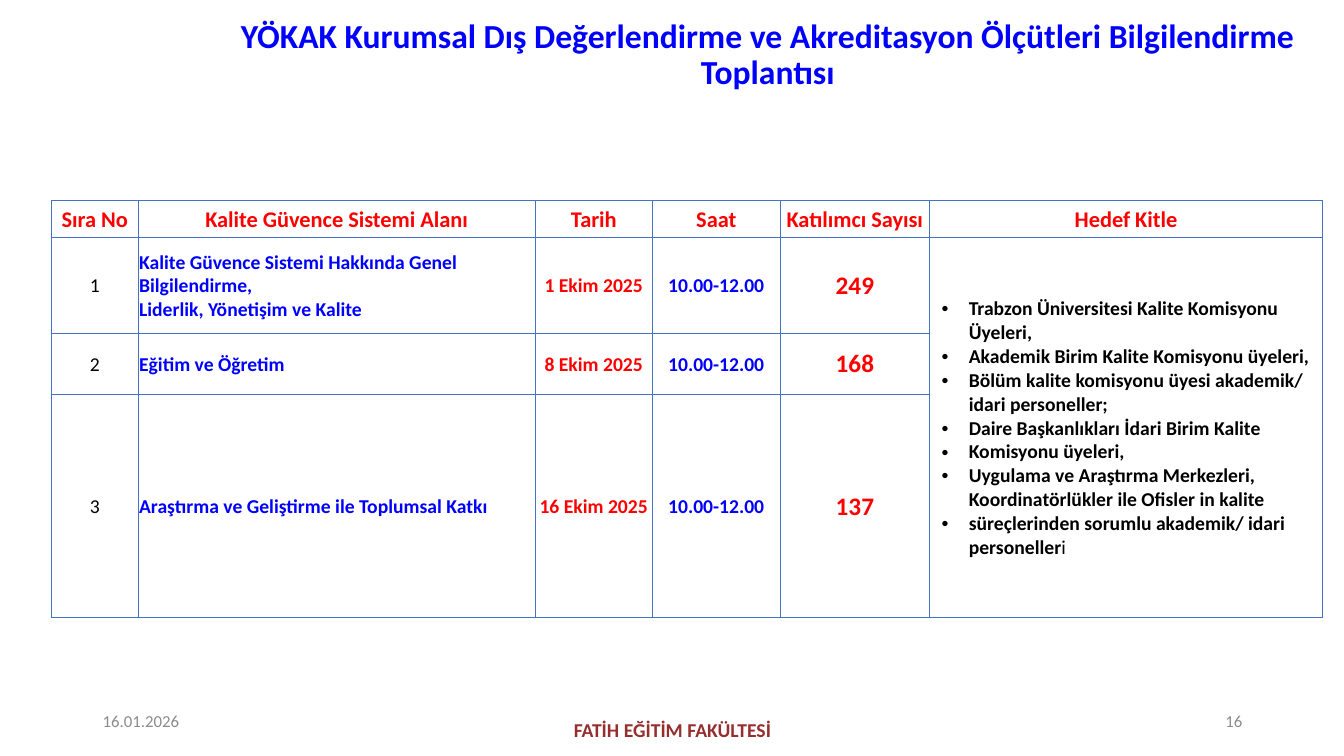
from lxml.etree import SubElement
from pptx import Presentation
from pptx.dml.color import RGBColor
from pptx.enum.text import MSO_ANCHOR, PP_ALIGN
from pptx.oxml.ns import qn
from pptx.util import Inches, Pt

FONT = "Calibri"
RED, BLUE, BLACK, GRAY, WINE, EDGE = "FF0000", "0000FF", "000000", "8C8C8C", "962E2E", "4472C4"
LEFT, MID, RIGHT = PP_ALIGN.LEFT, PP_ALIGN.CENTER, PP_ALIGN.RIGHT

TITLE = "YÖKAK Kurumsal Dış Değerlendirme ve Akreditasyon Ölçütleri Bilgilendirme Toplantısı"
HEADS = ["Sıra No", "Kalite Güvence Sistemi Alanı", "Tarih", "Saat", "Katılımcı Sayısı", "Hedef Kitle"]
HOURS = "10.00-12.00"
ROWS = [
    ("1", ["Kalite Güvence Sistemi Hakkında Genel Bilgilendirme,", "Liderlik, Yönetişim ve Kalite"],
     "1 Ekim 2025", HOURS, "249"),
    ("2", ["Eğitim ve Öğretim"], "8 Ekim 2025", HOURS, "168"),
    ("3", ["Araştırma ve Geliştirme ile Toplumsal Katkı"], "16 Ekim 2025", HOURS, "137"),
]
GROUPS = [
    ["Trabzon Üniversitesi Kalite Komisyonu Üyeleri,"],
    ["Akademik Birim Kalite Komisyonu üyeleri,"],
    ["Bölüm kalite komisyonu üyesi akademik/ idari personeller;"],
    ["Daire Başkanlıkları İdari Birim Kalite"],
    ["Komisyonu üyeleri,"],
    ["Uygulama ve Araştırma Merkezleri, Koordinatörlükler ile Ofisler in kalite"],
    ["süreçlerinden sorumlu akademik/ idari personeller", "i"],
]
STYLES = [(14, BLACK, False, MID), (14, BLUE, True, LEFT), (14, RED, True, MID),
          (14, BLUE, True, MID), (18, RED, True, MID)]
WIDTHS = [0.86, 3.94, 1.16, 1.27, 1.48, 3.9]
HEIGHTS = [0.37, 0.95, 0.6, 2.22]
FOOT = [
    ("FATİH EĞİTİM FAKÜLTESİ", (4.42, 7.04, 4.5, 0.4), (14, WINE, True, MID)),
    ("16.01.2026", (0.92, 6.95, 3, 0.4), (12, GRAY, False, LEFT)),
    ("16", (9.42, 6.95, 3, 0.4), (12, GRAY, False, RIGHT)),
]


def color(code):
    return RGBColor.from_string(code)


def add_run(para, text, size, code, bold):
    run = para.add_run()
    run.text = text
    font = run.font
    font.name, font.size, font.bold = FONT, Pt(size), bold
    font.color.rgb = color(code)


def write(frame, lines, style):
    size, code, bold, align = style
    for i, line in enumerate(lines):
        para = frame.add_paragraph() if i else frame.paragraphs[0]
        para.alignment = align
        add_run(para, line, size, code, bold)


def set_cell(cell):
    cell.margin_left = cell.margin_right = cell.margin_top = Inches(0.01)
    cell.margin_bottom = 0
    cell.vertical_anchor = MSO_ANCHOR.MIDDLE
    props = cell._tc.get_or_add_tcPr()
    for side in ("lnL", "lnR", "lnT", "lnB"):
        line = SubElement(props, qn(f"a:{side}"), w=str(Pt(1)))
        SubElement(SubElement(line, qn("a:solidFill")), qn("a:srgbClr"), val=EDGE)
    cell.fill.background()


def add_list(frame):
    for i, parts in enumerate(GROUPS):
        para = frame.add_paragraph() if i else frame.paragraphs[0]
        props = para._p.get_or_add_pPr()
        props.set("marL", str(Inches(0.38)))
        props.set("indent", str(Inches(-0.27)))
        SubElement(props, qn("a:buFont"), typeface="Arial")
        SubElement(props, qn("a:buChar"), char="•")
        for j, text in enumerate(parts):
            add_run(para, text, 14, BLACK, j == 0)


def add_title(slide):
    title = slide.shapes.title
    title.left, title.top, title.width, title.height = map(Inches, (2.1, 0.15, 11.03, 0.81))
    frame = title.text_frame
    frame.word_wrap = True
    frame.vertical_anchor = MSO_ANCHOR.MIDDLE
    write(frame, [TITLE], (24, BLUE, True, MID))
    frame.paragraphs[0].line_spacing = 0.9


def add_grid(slide):
    area = map(Inches, (0.51, 1.99, sum(WIDTHS), sum(HEIGHTS)))
    table = slide.shapes.add_table(len(HEIGHTS), len(WIDTHS), *area).table
    for col, width in zip(table.columns, WIDTHS):
        col.width = Inches(width)
    for row, height in zip(table.rows, HEIGHTS):
        row.height = Inches(height)
    for cell in table.iter_cells():
        set_cell(cell)
    for c, head in enumerate(HEADS):
        write(table.cell(0, c).text_frame, [head], (16, RED, True, MID))
    for r, row in enumerate(ROWS, 1):
        for c, (value, style) in enumerate(zip(row, STYLES)):
            lines = value if isinstance(value, list) else [value]
            write(table.cell(r, c).text_frame, lines, style)
    last = len(WIDTHS) - 1
    table.cell(1, last).merge(table.cell(len(ROWS), last))
    add_list(table.cell(1, last).text_frame)


def add_foot(slide):
    for text, area, style in FOOT:
        frame = slide.shapes.add_textbox(*map(Inches, area)).text_frame
        frame.word_wrap = True
        frame.vertical_anchor = MSO_ANCHOR.MIDDLE
        write(frame, [text], style)


def main():
    deck = Presentation()
    deck.slide_width, deck.slide_height = Inches(13.33), Inches(7.5)
    slide = deck.slides.add_slide(deck.slide_layouts[5])
    add_title(slide)
    add_foot(slide)
    add_grid(slide)
    deck.save("out.pptx")


if __name__ == "__main__":
    main()
